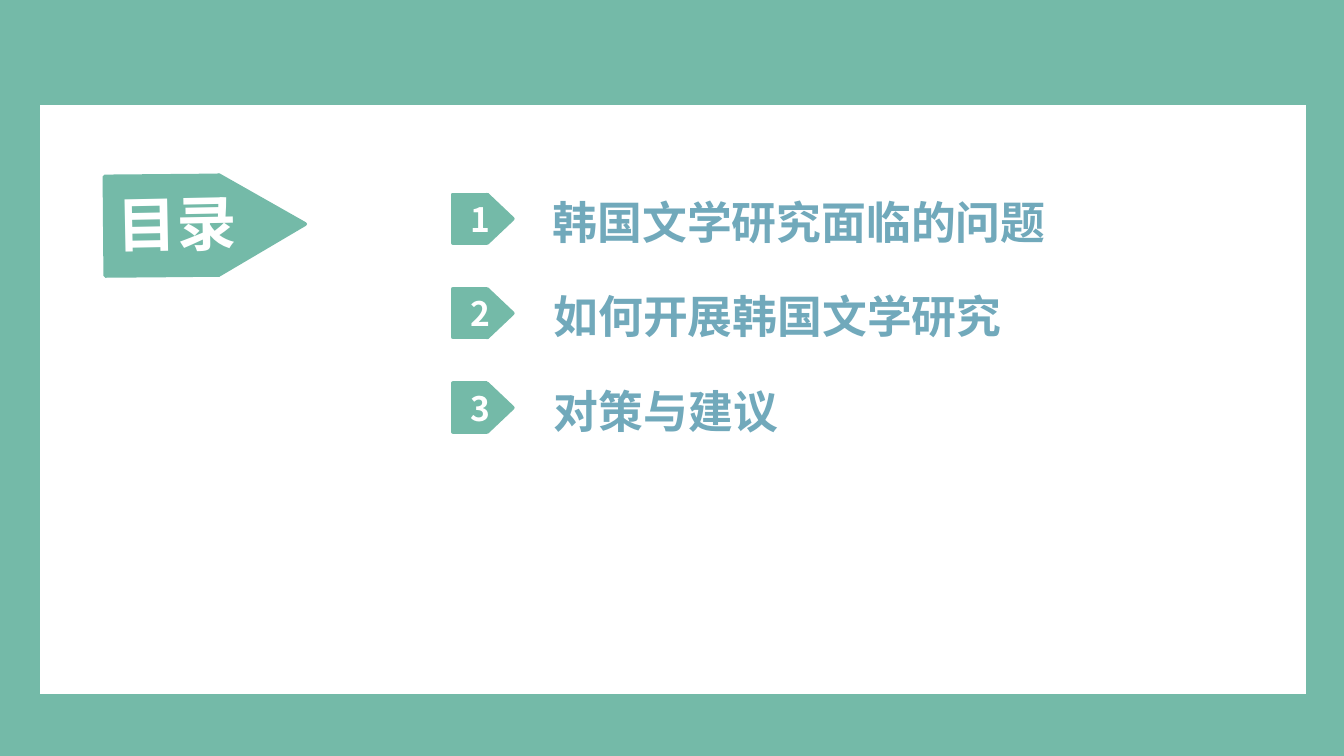
from lxml import etree
from pptx import Presentation
from pptx.dml.color import RGBColor
from pptx.enum.shapes import MSO_SHAPE
from pptx.enum.text import MSO_ANCHOR, MSO_AUTO_SIZE, PP_ALIGN
from pptx.oxml.ns import qn
from pptx.util import Pt

RECTANGLE = MSO_SHAPE.RECTANGLE
TRIANGLE = MSO_SHAPE.ISOSCELES_TRIANGLE
LEFT, CENTER = PP_ALIGN.LEFT, PP_ALIGN.CENTER
TOP = MSO_ANCHOR.TOP
FIT_SHAPE = MSO_AUTO_SIZE.SHAPE_TO_FIT_TEXT

FONT = "Noto Sans CJK SC"
GREEN, BLUE, WHITE = "74BAA8", "71A9BB", "FFFFFF"

# Agenda entries: text, left and width of its box
ENTRIES = [
    ("韩国文学研究面临的问题", 286.6, 283),
    ("如何开展韩国文学研究", 274.3, 284.4),
    ("对策与建议", 288.7, 136.1),
]
FIRST_ROW_TOP = 100.8
ROW_PITCH = 50.6


def color(hex_value):
    return RGBColor.from_string(hex_value)


def set_attributes(target, values):
    for name, value in values.items():
        setattr(target, name, value)


def place(shape, left, top, width, height, rotation=0):
    set_attributes(shape, {
        "left": Pt(left), "top": Pt(top), "width": Pt(width),
        "height": Pt(height), "rotation": rotation,
    })


def add_block(shapes, kind, box, fill=GREEN, rotation=0):
    """Add a filled preset shape with the green outline."""
    shape = shapes.add_shape(kind, *map(Pt, box))
    shape.rotation = rotation
    shape.shadow.inherit = False
    shape.fill.solid()
    shape.fill.fore_color.rgb = color(fill)
    shape.line.color.rgb = color(GREEN)
    shape.line.width = Pt(2)


def write(shape, text, size, font_color, alignment=LEFT):
    """Fill a shape with one bold line of text."""
    frame = shape.text_frame
    set_attributes(frame, {"word_wrap": True, "auto_size": FIT_SHAPE,
                           "vertical_anchor": TOP})
    paragraph = frame.paragraphs[0]
    paragraph.alignment = alignment
    run = paragraph.add_run()
    run.text = text
    set_attributes(run.font, {"name": FONT, "size": Pt(size), "bold": True})
    run.font.color.rgb = color(font_color)
    # East Asian typeface
    etree.SubElement(run.font._element, qn("a:ea"), typeface=FONT)


def add_label(shapes, box, text, size, font_color, alignment=LEFT):
    label = shapes.add_textbox(*map(Pt, box))
    write(label, text, size, font_color, alignment)


def add_title_tag(slide):
    """Draw the large arrow tag and put the title on top of it."""
    tag = slide.shapes.add_group_shape()
    add_block(tag.shapes, RECTANGLE, (56.2, 94.3, 61.2, 53.3), rotation=359.5)
    add_block(tag.shapes, TRIANGLE, (113.8, 97.2, 53.3, 46.1), rotation=89.5)
    title = slide.shapes.title
    place(title, 55.4, 96.5, 85, 46.1, rotation=358.8)
    write(title, "目录", 32, WHITE)
    tag._element.addnext(title._element)


def add_number_badge(slide, number, top):
    badge = slide.shapes.add_group_shape()
    add_block(badge.shapes, RECTANGLE, (242.6, top, 18, 25.9))
    add_block(badge.shapes, TRIANGLE, (254.9, top + 6.2, 25.9, 13.7), rotation=90)
    add_label(badge.shapes, (244.8, top - 1.2, 23, 28.8), str(number), 18, WHITE)


def main():
    presentation = Presentation()
    presentation.slide_width, presentation.slide_height = Pt(720), Pt(405)
    slide = presentation.slides.add_slide(presentation.slide_layouts[5])

    # Background and white panel
    background = slide.background.fill
    background.solid()
    background.fore_color.rgb = color(GREEN)
    add_block(slide.shapes, RECTANGLE, (20.2, 55.4, 680.4, 317.5), fill=WHITE)

    # Title and agenda rows
    add_title_tag(slide)
    for index, (text, left, width) in enumerate(ENTRIES):
        top = FIRST_ROW_TOP + index * ROW_PITCH
        add_label(slide.shapes, (left, top, width, 36), text, 24, BLUE, CENTER)
        add_number_badge(slide, index + 1, top + 3.4)

    presentation.save("out.pptx")


if __name__ == "__main__":
    main()
